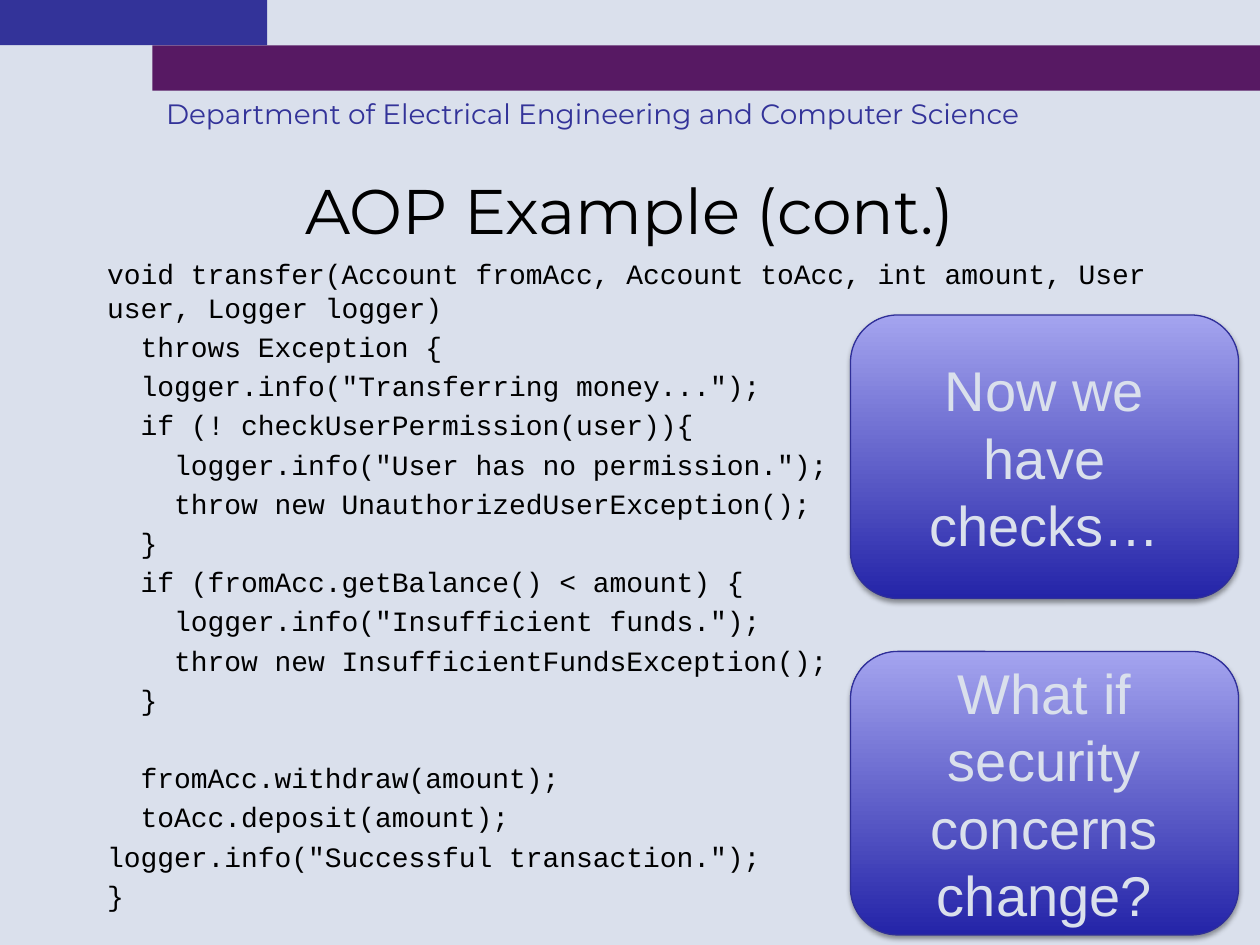
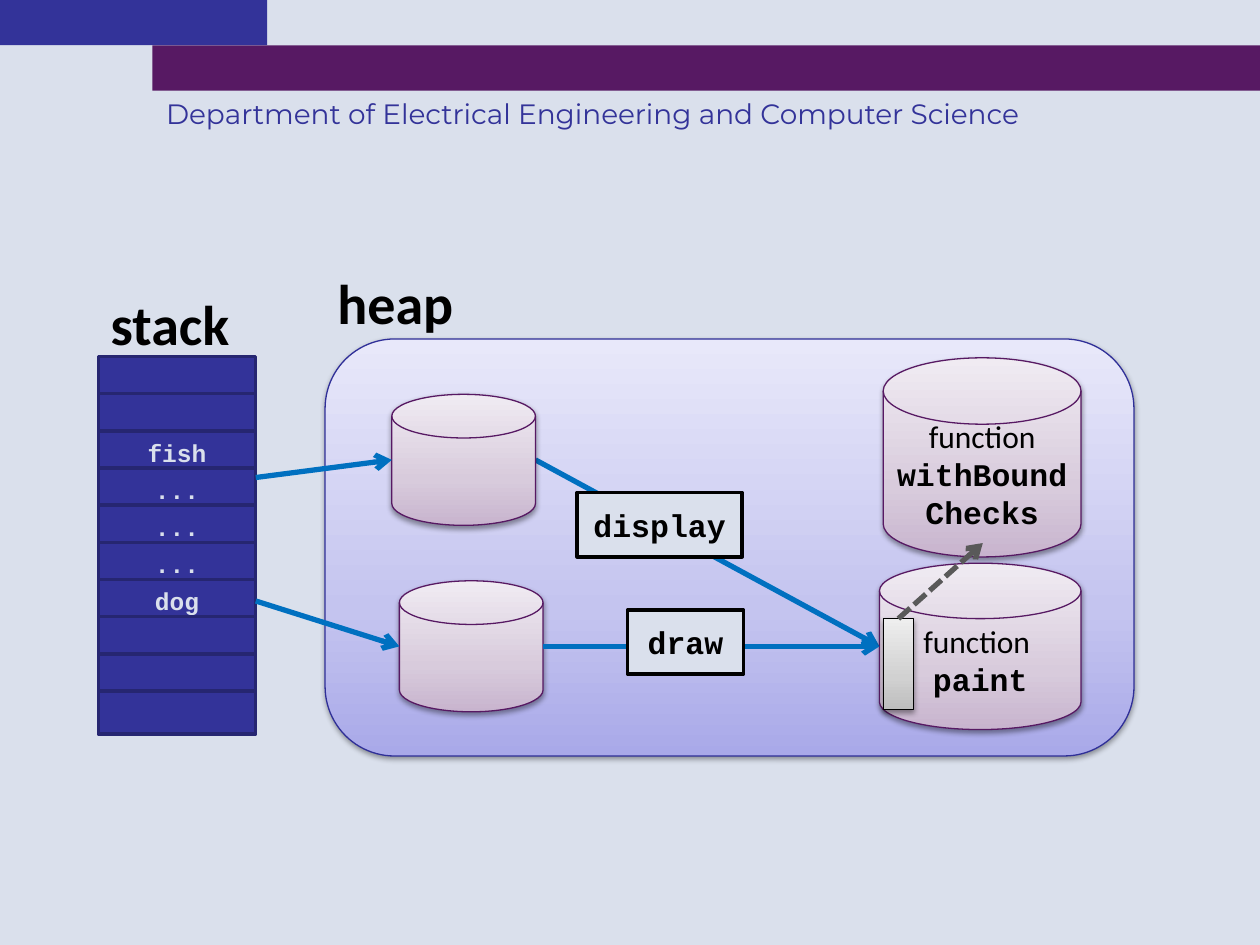
"""Two lecture slides: an AOP code example and a stack and heap diagram."""
from lxml.etree import SubElement
from pptx import Presentation
from pptx.dml.color import RGBColor
from pptx.enum.dml import MSO_LINE
from pptx.enum.shapes import MSO_CONNECTOR, MSO_SHAPE
from pptx.enum.text import MSO_ANCHOR, MSO_AUTO_SIZE, PP_ALIGN
from pptx.oxml.ns import qn
from pptx.util import Inches, Pt

PALE = RGBColor(0xDA, 0xE0, 0xEC)
BLACK = RGBColor(0, 0, 0)
NAVY = RGBColor(0x33, 0x33, 0x99)
NAVY_EDGE = RGBColor(0x26, 0x26, 0x71)
INDIGO = RGBColor(0x2F, 0x2F, 0x98)
PURPLE = RGBColor(0x57, 0x19, 0x63)
BLUE = RGBColor(0x00, 0x70, 0xC0)
GREY = RGBColor(0x59, 0x59, 0x59)
CALLOUT = [(0, RGBColor(0x24, 0x24, 0xA8)), (100, RGBColor(0xA4, 0xA4, 0xEF))]
HEAP = [(0, RGBColor(0xA9, 0xA9, 0xE9)), (35, RGBColor(0xC4, 0xC4, 0xEF)),
        (100, RGBColor(0xE8, 0xE8, 0xFA))]
LILAC = [(0, RGBColor(0xC8, 0xB4, 0xCE)), (35, RGBColor(0xD8, 0xCB, 0xDC)),
         (100, RGBColor(0xF0, 0xEB, 0xF2))]
SILVER = [(0, RGBColor(0xBD, 0xBD, 0xBD)), (35, RGBColor(0xD1, 0xD1, 0xD1)),
          (100, RGBColor(0xEE, 0xEE, 0xEE))]
HEAD, SANS, LABEL, MONO = "Montserrat", "Arial", "Calibri", "Courier New"

prs = Presentation()
prs.slide_width, prs.slide_height = Inches(10), Inches(7.5)
COL = prs.slide_width / 100
ROW = prs.slide_height / 75


def add_box(s, kind, x, y, w, h, fill, line=None, weight=0.75, paras=(), size=18, color=BLACK):
    """Add a shape on the grid; a list as fill gives a shadowed gradient."""
    sp = s.shapes.add_shape(kind, int(x * COL), int(y * ROW), int(w * COL), int(h * ROW))
    sp.shadow.inherit = False
    if isinstance(fill, list):
        sp.fill.gradient()
        sp.fill.gradient_angle = 90
        stops = sp.element.spPr.find(qn("a:gradFill")).find(qn("a:gsLst"))
        for old in list(stops):
            stops.remove(old)
        for pos, rgb in fill:
            gs = SubElement(stops, qn("a:gs"), pos=str(pos * 1000))
            SubElement(gs, qn("a:srgbClr"), val=str(rgb))
        effects = sp.element.spPr.find(qn("a:effectLst"))
        shadow = SubElement(effects, qn("a:outerShdw"), blurRad=str(Pt(3.1)),
                            dist=str(Pt(1.6)), dir="5400000", rotWithShape="0")
        clr = SubElement(shadow, qn("a:srgbClr"), val="000000")
        SubElement(clr, qn("a:alpha"), val="38000")
    else:
        sp.fill.solid()
        sp.fill.fore_color.rgb = fill
    if line is None:
        sp.line.fill.background()
    else:
        sp.line.color.rgb = line
        sp.line.width = Pt(weight)
    tf = sp.text_frame
    tf.word_wrap = True
    tf.vertical_anchor = MSO_ANCHOR.MIDDLE
    for i, runs in enumerate(paras):
        p = tf.add_paragraph() if i else tf.paragraphs[0]
        p.alignment = PP_ALIGN.CENTER
        for text, font, bold in runs:
            r = p.add_run()
            r.text = text
            r.font.name, r.font.size, r.font.bold = font, Pt(size), bold
            r.font.color.rgb = color
    return sp


def add_arrow(s, x1, y1, x2, y2, color=BLUE):
    """Add a straight arrow between two grid points."""
    cx = s.shapes.add_connector(MSO_CONNECTOR.STRAIGHT, int(x1 * COL), int(y1 * ROW),
                                int(x2 * COL), int(y2 * ROW))
    cx.line.color.rgb = color
    cx.line.width = Pt(3)
    SubElement(cx.line._get_or_add_ln(), qn("a:tailEnd"), type="arrow")
    SubElement(cx.element.spPr, qn("a:effectLst"))
    return cx


s = prs.slides.add_slide(prs.slide_layouts[1])
master = prs.slide_master
master.background.fill.solid()
master.background.fill.fore_color.rgb = PALE
right_band = add_box(s, MSO_SHAPE.RECTANGLE, 12.1, 3.6, 87.9, 3.6, PURPLE)
left_band = add_box(s, MSO_SHAPE.RECTANGLE, 0, 0, 21.2, 3.6, NAVY)
dept = s.shapes.add_textbox(int(12.2 * COL), int(7.2 * ROW), int(82 * COL), int(3.7 * ROW))
tf = dept.text_frame
tf.word_wrap = True
tf.text = "Department of Electrical Engineering and Computer Science"
font = tf.paragraphs[0].runs[0].font
font.name, font.size, font.color.rgb = HEAD, Pt(16), NAVY
for sp in (right_band, left_band, dept):
    master.shapes.element.append(sp.element)

title, body = s.placeholders
title.left, title.top = int(7.5 * COL), int(12.5 * ROW)
title.width, title.height = int(85 * COL), int(8.3 * ROW)
tf = title.text_frame
tf.text = "AOP Example (cont.)"
tf.auto_size = MSO_AUTO_SIZE.NONE
tf.vertical_anchor = MSO_ANCHOR.MIDDLE
font = tf.paragraphs[0].runs[0].font
font.name, font.size, font.color.rgb = HEAD, Pt(36), BLACK

CODE = """void transfer(Account fromAcc, Account toAcc, int amount, User user, Logger logger)
  throws Exception {
  logger.info("Transferring money...");
  if (! checkUserPermission(user)){
    logger.info("User has no permission.");
    throw new UnauthorizedUserException();
  }
  if (fromAcc.getBalance() < amount) {
    logger.info("Insufficient funds.");
    throw new InsufficientFundsException();
  }
  fromAcc.withdraw(amount);
  toAcc.deposit(amount);
logger.info("Successful transaction.");
}"""
body.left, body.top = int(7.5 * COL), int(19.8 * ROW)
body.width, body.height = int(85 * COL), int(54.4 * ROW)
tf = body.text_frame
tf.text = CODE
tf.auto_size = MSO_AUTO_SIZE.NONE
for i, p in enumerate(tf.paragraphs):
    pPr = p._p.get_or_add_pPr()
    pPr.set("marL", "0")
    pPr.set("indent", "0")
    SubElement(pPr, qn("a:buNone"))
    p.line_spacing = Pt(19.5)
    p.space_before = Pt(2.9 if i else 0)
    if "withdraw" in p.text:
        p.space_before = Pt(25.3)
    font = p.runs[0].font
    font.name, font.size, font.color.rgb = MONO, Pt(16), BLACK

for row, text in ((25, "Now we have checks…"), (51.7, "What if security concerns change?")):
    sp = add_box(s, MSO_SHAPE.ROUNDED_RECTANGLE, 67.5, row, 30.8, 22.5, CALLOUT, INDIGO,
                 paras=[[(text, SANS, False)]], size=32, color=PALE)
    sp.text_frame.paragraphs[0].line_spacing = Pt(38.5)

s = prs.slides.add_slide(prs.slide_layouts[6])
add_box(s, MSO_SHAPE.ROUNDED_RECTANGLE, 25.8, 26.9, 64.2, 33.1, HEAP, INDIGO)
for text, x, y, w in (("heap", 25.8, 20.8, 11.3), ("stack", 7.8, 22.5, 11.5)):
    tb = s.shapes.add_textbox(int(x * COL), int(y * ROW), int(w * COL), int(6 * ROW))
    tb.text_frame.word_wrap = False
    tb.text_frame.text = text
    font = tb.text_frame.paragraphs[0].runs[0].font
    font.name, font.size, font.bold, font.color.rgb = LABEL, Pt(32), True, BLACK

slots = []
for i, text in enumerate(["", "", "fish", "...", "...", "...", "dog", "", "", ""]):
    slots.append(add_box(s, MSO_SHAPE.RECTANGLE, 7.8, 28.3 + 2.95 * i, 12.5, 3.4, NAVY,
                         NAVY_EDGE, 2, [[(text, MONO, True)]] if text else (), 14, PALE))

add_arrow(s, 42.5, 36.5, 69.8, 51.3)
for x, y, w, h, paras in (
        (31.1, 31.3, 11.4, 10.4, ()),
        (31.7, 46.1, 11.4, 10.4, ()),
        (70.1, 28.4, 15.7, 15.8, [[("function ", LABEL, False), ("withBoundChecks", MONO, True)]]),
        (69.8, 44.7, 16, 13.2, [[("function ", LABEL, False)], [("paint", MONO, True)]])):
    add_box(s, MSO_SHAPE.FLOWCHART_MAGNETIC_DISK, x, y, w, h, LILAC, PURPLE, paras=paras)

add_arrow(s, 20.3, 37.9, 31.1, 36.5)
add_arrow(s, 43.1, 51.3, 69.8, 51.3)
add_arrow(s, 20.3, 47.8, 31.7, 51.3).begin_connect(slots[6], 3)
marker = add_box(s, MSO_SHAPE.RECTANGLE, 70.1, 49.1, 2.4, 7.2, SILVER, BLACK)
redirect = add_arrow(s, 71.3, 49.1, 78, 43.1, GREY)
redirect.line.dash_style = MSO_LINE.SQUARE_DOT
redirect.begin_connect(marker, 0)
for text, x, y, w in (("draw", 49.8, 48.4, 9.2), ("display", 45.8, 39.1, 13.1)):
    add_box(s, MSO_SHAPE.RECTANGLE, x, y, w, 5.1, PALE, BLACK, 2, [[(text, MONO, True)]])

prs.save("out.pptx")
